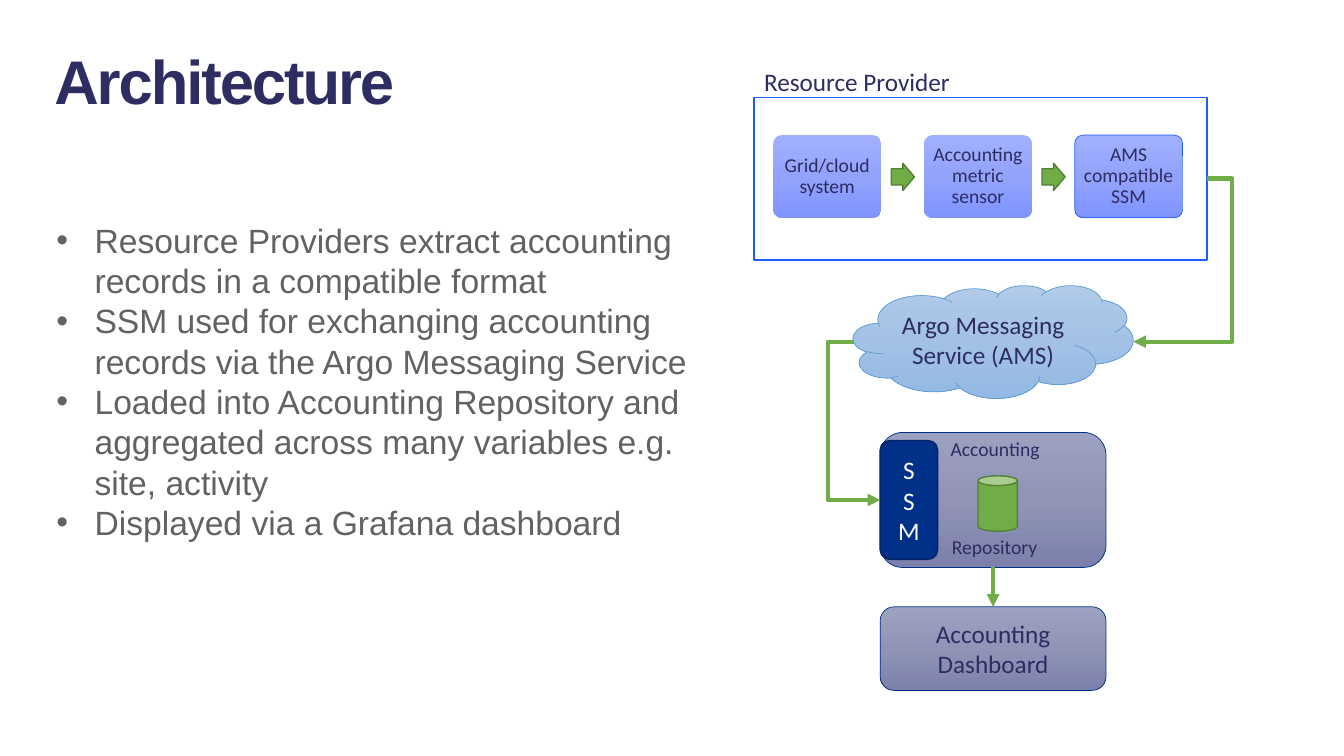
from copy import deepcopy
from dataclasses import dataclass, field

from lxml import etree
from pptx import Presentation
from pptx import util as u
from pptx.dml.color import RGBColor
from pptx.enum import shapes, text
from pptx.oxml.ns import qn

COLUMNS, ROWS = 133.3, 75
SLIDE_WIDTH, SLIDE_HEIGHT = u.Inches(13.33), u.Inches(7.5)

NAVY, INK, GREY, WHITE = "2E2D62", "2E2C61", "626262", "FFFFFF"
GREEN, DARK_GREEN, BLUE, DEEP_BLUE = "70AD47", "538035", "1E5DF8", "003088"
SKY = ("B1CBE9", "A3C1E5", "93B9E4")
SLATE = ("9DA1C1", "9094B6", "7C81AC")
PERIWINKLE = ("A1B0FE", "93A3FC", "7F94FF")

Kind = shapes.MSO_SHAPE
CENTER, LEFT = text.PP_ALIGN.CENTER, text.PP_ALIGN.LEFT
MIDDLE, TOP = text.MSO_ANCHOR.MIDDLE, text.MSO_ANCHOR.TOP


@dataclass(frozen=True)
class Style:
    size: float = 18
    color: str = INK
    face: str = "Calibri"
    bold: bool = False
    tracking: int = 0
    align: text.PP_ALIGN = CENTER
    anchor: text.MSO_ANCHOR = MIDDLE
    spacing: float = 1.0
    inset: float | None = None
    bullet: str = ""


@dataclass(frozen=True)
class Block:
    column: float
    row: float
    columns: float
    rows: float
    kind: shapes.MSO_SHAPE | None = None
    fill: tuple[str, ...] = ()
    line: tuple[str, float] | None = None
    lines: tuple[str, ...] = ()
    style: Style = field(default_factory=Style)
    adjust: tuple[float, ...] = ()


@dataclass(frozen=True)
class Flow:
    start: tuple[float, float]
    end: tuple[float, float]
    bend: float | None = None


def across(columns: float) -> int:
    return round(SLIDE_WIDTH * columns / COLUMNS)


def down(rows: float) -> int:
    return round(SLIDE_HEIGHT * rows / ROWS)


def color(value: str) -> RGBColor:
    return RGBColor.from_string(value)


def assign(target: object, values: dict[str, object]) -> None:
    for name, value in values.items():
        setattr(target, name, value)


def paint(shape, block: Block) -> None:
    shape.shadow.inherit = False
    if len(block.fill) == 1:
        shape.fill.solid()
        shape.fill.fore_color.rgb = color(block.fill[0])
    else:
        shape.fill.gradient()
        shape.fill.gradient_angle = 270
        stops = next(shape._element.iter(qn("a:gsLst")))
        stops.insert(1, deepcopy(stops[0]))
        for index, stop in enumerate(shape.fill.gradient_stops):
            stop.position = index / 2
            stop.color.rgb = color(block.fill[index])
    if block.line:
        shape.line.color.rgb = color(block.line[0])
        shape.line.width = u.Pt(block.line[1])
    else:
        shape.line.fill.background()
    for index, value in enumerate(block.adjust):
        shape.adjustments[index] = value


def write(frame, lines: tuple[str, ...], style: Style) -> None:
    assign(frame, {"word_wrap": True, "vertical_anchor": style.anchor})
    if style.inset is not None:
        sides = ("margin_left", "margin_right", "margin_top", "margin_bottom")
        assign(frame, dict.fromkeys(sides, across(style.inset)))
    for index, line in enumerate(lines):
        paragraph = frame.add_paragraph() if index else frame.paragraphs[0]
        assign(paragraph, {"alignment": style.align, "line_spacing": style.spacing})
        if style.bullet:
            properties = paragraph._p.get_or_add_pPr()
            properties.set("marL", str(across(3.8)))
            properties.set("indent", str(-across(3.8)))
            etree.SubElement(properties, qn("a:buFont"), typeface="Arial")
            etree.SubElement(properties, qn("a:buChar"), char=style.bullet)
        run = paragraph.add_run()
        run.text = line
        assign(run.font, {"size": u.Pt(style.size), "name": style.face, "bold": style.bold})
        run.font.color.rgb = color(style.color)
        if style.tracking:
            run._r.get_or_add_rPr().set("spc", str(style.tracking))


def draw_block(slide, block: Block) -> None:
    place = (across(block.column), down(block.row), across(block.columns), down(block.rows))
    if block.kind is None:
        shape = slide.shapes.add_textbox(*place)
    else:
        shape = slide.shapes.add_shape(block.kind, *place)
        paint(shape, block)
    if block.lines:
        write(shape.text_frame, block.lines, block.style)


def draw_flow(slide, flow: Flow) -> None:
    kind = shapes.MSO_CONNECTOR.STRAIGHT if flow.bend is None else shapes.MSO_CONNECTOR.ELBOW
    (x1, y1), (x2, y2) = flow.start, flow.end
    arrow = slide.shapes.add_connector(kind, across(x1), down(y1), across(x2), down(y2))
    arrow.line.color.rgb = color(GREEN)
    arrow.line.width = u.Pt(3)
    properties = arrow._element.spPr
    etree.SubElement(properties.find(qn("a:ln")), qn("a:tailEnd"), type="triangle")
    etree.SubElement(properties, qn("a:effectLst"))
    if flow.bend is not None:
        guides = next(properties.iter(qn("a:avLst")))
        share = round((flow.bend - x1) / (x2 - x1) * 100000)
        etree.SubElement(guides, qn("a:gd"), name="adj1", fmla=f"val {share}")


HEADING = Style(44, NAVY, "Arial", True, -150, LEFT, TOP)
POINTS = Style(24, GREY, "Arial", align=LEFT, anchor=TOP, bullet="•")
CAPTION = Style(align=LEFT, anchor=TOP)
LABEL = Style(14, anchor=TOP)
STEP = Style(14, spacing=0.9, inset=0.6)

STEPS = ("Grid/cloud system", "Accounting metric sensor", "AMS compatible SSM")
STEP_PITCH = 14.95

BULLETS = (
    "Resource Providers extract accounting records in a compatible format",
    "SSM used for exchanging accounting records via the Argo Messaging Service",
    "Loaded into Accounting Repository and aggregated across many variables e.g. site, activity",
    "Displayed via a Grafana dashboard",
)


def provider_chain() -> list[Block]:
    chain = []
    for index, step in enumerate(STEPS):
        last = index == len(STEPS) - 1
        shift = index * STEP_PITCH
        chain.append(Block(76.7 + shift, 13.4, 10.7, 8.2, Kind.ROUNDED_RECTANGLE, PERIWINKLE,
                           (BLUE, 0.5) if last else None, (step,), STEP, (0.1,)))
        if not last:
            chain.append(Block(88.4 + shift, 16.2, 2.3, 2.7, Kind.RIGHT_ARROW, (GREEN,),
                               (DARK_GREEN, 1), adjust=(0.6, 0.5)))
    return chain


BLOCKS = [
    Block(4.4, 3.8, 69.5, 8.4, lines=("Architecture",), style=HEADING),
    Block(4.6, 21.3, 64.8, 33.3, lines=BULLETS, style=POINTS),
    Block(74.8, 9.7, 44.9, 16.1, Kind.RECTANGLE, (WHITE,), (BLUE, 1)),
    Block(74.8, 6.1, 27.6, 4, lines=("Resource Provider",), style=CAPTION),
    *provider_chain(),
    Block(84.6, 28.3, 27.8, 11.2, Kind.CLOUD, SKY, ("5B9BD5", 0.5),
          ("Argo Messaging Service (AMS)",)),
    Block(87.3, 42.9, 22.4, 13.4, Kind.ROUNDED_RECTANGLE, SLATE, (DEEP_BLUE, 0.5)),
    Block(97, 47.2, 3.9, 5.5, Kind.CAN, (GREEN,), (DARK_GREEN, 1)),
    Block(93.1, 42.9, 11.2, 3.4, lines=("Accounting",), style=LABEL),
    Block(93, 52.6, 11.3, 3.4, lines=("Repository",), style=LABEL),
    Block(87.3, 43.7, 5.7, 11.8, Kind.ROUNDED_RECTANGLE, (DEEP_BLUE,), ("002465", 1),
          ("S", "S", "M"), Style(color=WHITE)),
    Block(87.3, 60.2, 22.4, 8.3, Kind.ROUNDED_RECTANGLE, SLATE, (DEEP_BLUE, 0.5),
          ("Accounting Dashboard",)),
]

FLOWS = [
    Flow((119.7, 17.7), (112.4, 33.9), 122.2),
    Flow((84.7, 33.9), (87.3, 49.6), 82.1),
    Flow((98.5, 56.3), (98.5, 60.2)),
]


def main() -> None:
    deck = Presentation()
    assign(deck, {"slide_width": SLIDE_WIDTH, "slide_height": SLIDE_HEIGHT})
    slide = deck.slides.add_slide(deck.slide_layouts[6])
    for block in BLOCKS:
        draw_block(slide, block)
    for flow in FLOWS:
        draw_flow(slide, flow)
    deck.save("out.pptx")


if __name__ == "__main__":
    main()
